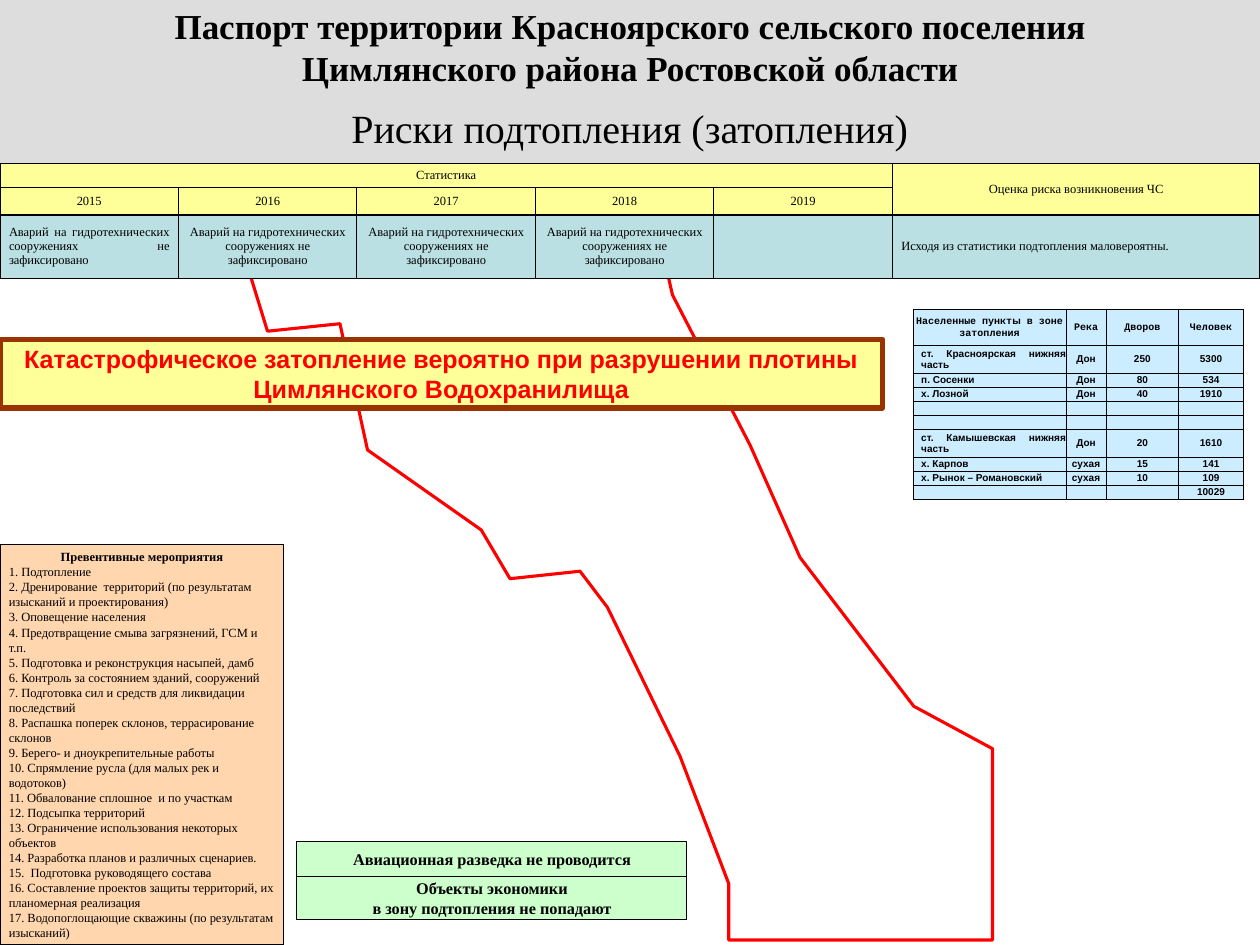
import pptx
import pptx.dml.color
import pptx.enum.shapes
import pptx.enum.text
import pptx.oxml.ns
import pptx.util
from lxml import etree

Pt = pptx.util.Pt
ALIGN = {
    "l": pptx.enum.text.PP_ALIGN.LEFT,
    "c": pptx.enum.text.PP_ALIGN.CENTER,
    "j": pptx.enum.text.PP_ALIGN.JUSTIFY,
}
MIDDLE = pptx.enum.text.MSO_ANCHOR.MIDDLE
TOP = pptx.enum.text.MSO_ANCHOR.TOP
SERIF, SANS, MONO = "Times New Roman", "Arial", "Courier New"

FLOOD_OUTLINE = [
    (793.5, 752.5), (793.5, 599), (731, 565), (640, 445.5), (600.5, 355.5),
    (538, 236), (521, 162.5), (476, 32.5), (299.5, 37.5), (198, 94.5),
    (186.5, 173.5), (214.5, 265), (271.5, 259), (294.5, 360.5), (385, 423.5),
    (407.5, 463), (464.5, 457), (486.5, 486), (543.5, 605), (583, 707),
    (583, 752.5),
]
YEARS = ["2015", "2016", "2017", "2018", "2019"]
NO_ACCIDENTS = "Аварий на гидротехнических сооружениях не зафиксировано"
SETTLEMENT_HEADS = [
    [("Населенны", MONO), ("е", SANS), (" пункт", MONO), ("ы", SANS),
     (" в зоне затопления", MONO)],
    "Река", "Дворов", "Человек",
]
SETTLEMENTS = [
    ("ст. Красноярская нижняя часть", "Дон", "250", "5300"),
    ("п. Сосенки", "Дон", "80", "534"),
    ("х. Лозной", "Дон", "40", "1910"),
    ("", "", "", ""),
    ("", "", "", ""),
    ("ст. Камышевская нижняя часть", "Дон", "20", "1610"),
    ("х. Карпов", "сухая", "15", "141"),
    ("х. Рынок – Романовский", "сухая", "10", "109"),
    ("", "", "", "10029"),
]
MEASURES = [
    "1. Подтопление",
    "2. Дренирование  территорий (по результатам изысканий и проектирования)",
    "3. Оповещение населения",
    "4. Предотвращение смыва загрязнений, ГСМ и т.п.",
    "5. Подготовка и реконструкция насыпей, дамб",
    "6. Контроль за состоянием зданий, сооружений",
    "7. Подготовка сил и средств для ликвидации последствий",
    "8. Распашка поперек склонов, террасирование склонов",
    "9. Берего- и дноукрепительные работы",
    "10. Спрямление русла (для малых рек и водотоков)",
    "11. Обвалование сплошное  и по участкам",
    "12. Подсыпка территорий",
    "13. Ограничение использования некоторых объектов",
    "14. Разработка планов и различных сценариев.",
    "15.  Подготовка руководящего состава",
    "16. Составление проектов защиты территорий, их планомерная реализация",
    "17. Водопоглощающие скважины (по результатам изысканий)",
]


def rgb(color):
    return pptx.dml.color.RGBColor.from_string(color)


def write_text(paragraph, text, size=10, font=SERIF, color="000000", bold=False,
               align="c", indent=0):
    """Text is a string, or a list of (text, font) runs."""
    paragraph.alignment = ALIGN[align]
    if indent:
        paragraph._p.get_or_add_pPr().set("marL", str(Pt(indent)))
    if not text:
        etree.SubElement(paragraph._p, pptx.oxml.ns.qn("a:endParaRPr"), sz=str(size * 100))
        return
    for words, face in [(text, font)] if isinstance(text, str) else text:
        run = paragraph.add_run()
        run.text = words
        run.font.size, run.font.name, run.font.bold = Pt(size), face, bold
        run.font.color.rgb = rgb(color)


def set_margins(holder, across, down):
    holder.margin_left = holder.margin_right = Pt(across)
    holder.margin_top = holder.margin_bottom = Pt(down)


def add_panel(slide, box, lines, fill, line=None, line_width=1, anchor=MIDDLE, **style):
    """Draws a filled rectangle with one paragraph for each line of text."""
    panel = slide.shapes.add_shape(pptx.enum.shapes.MSO_SHAPE.RECTANGLE, *map(Pt, box))
    panel.shadow.inherit = False
    panel.fill.solid()
    panel.fill.fore_color.rgb = rgb(fill)
    if line:
        panel.line.color.rgb = rgb(line)
        panel.line.width = Pt(line_width)
    else:
        panel.line.fill.background()
    frame = panel.text_frame
    frame.word_wrap = True
    frame.vertical_anchor = anchor
    set_margins(frame, 7.2, 3.6)
    for index, words in enumerate(lines):
        paragraph = frame.add_paragraph() if index else frame.paragraphs[0]
        write_text(paragraph, words, **style)
    return panel


def add_grid(slide, box, widths, heights):
    grid = slide.shapes.add_table(len(heights), len(widths), *map(Pt, box)).table
    grid.first_row = grid.horz_banding = False
    for column, width in zip(grid.columns, widths):
        column.width = Pt(width)
    for row, height in zip(grid.rows, heights):
        row.height = Pt(height)
    return grid


def fill_cell(cell, text, fill, margins=(7.2, 3.6), **style):
    properties = cell._tc.get_or_add_tcPr()
    for side in ("lnL", "lnR", "lnT", "lnB"):
        border = etree.SubElement(properties, pptx.oxml.ns.qn("a:" + side), w=str(Pt(1)))
        solid = etree.SubElement(border, pptx.oxml.ns.qn("a:solidFill"))
        etree.SubElement(solid, pptx.oxml.ns.qn("a:srgbClr"), val="000000")
    cell.fill.solid()
    cell.fill.fore_color.rgb = rgb(fill)
    cell.vertical_anchor = MIDDLE
    set_margins(cell, *margins)
    write_text(cell.text_frame.paragraphs[0], text, **style)


def add_flood_zone(slide, outline):
    builder = slide.shapes.build_freeform(*outline[0], scale=Pt(1))
    builder.add_line_segments(outline[1:], close=True)
    zone = builder.convert_to_shape()
    zone.shadow.inherit = False
    zone.fill.background()
    zone.line.color.rgb = rgb("FF0000")
    zone.line.width = Pt(2.5)


def add_heading(slide, left, top, width):
    add_panel(slide, (left, top + 72, width, 60.5), ["Риски подтопления (затопления)"],
              "DDDDDD", size=32)
    add_panel(slide, (left, top, width, 74),
              ["Паспорт территории Красноярского сельского поселения",
               "Цимлянского района Ростовской области"],
              "DDDDDD", anchor=TOP, size=28, bold=True)


def add_statistics(slide, box):
    year_width = 142.8
    widths = [year_width] * len(YEARS) + [box[2] - year_width * len(YEARS)]
    grid = add_grid(slide, box, widths, [19.5, 22, 50.5])
    last = len(YEARS)
    rows = [
        ["Статистика"] + [""] * (last - 1) + ["Оценка риска возникновения ЧС"],
        YEARS + [""],
        [NO_ACCIDENTS] * 4 + ["", "Исходя из статистики подтопления маловероятны."],
    ]
    for r, row in enumerate(rows):
        for c, words in enumerate(row):
            fill_cell(grid.cell(r, c), words, "BBE0E3" if r == 2 else "FFFF99",
                      align="j" if r == 2 and c in (0, last) else "c")
    grid.cell(0, 0).merge(grid.cell(0, last - 1))
    grid.cell(0, last).merge(grid.cell(1, last))


def add_settlements(slide, box):
    heights = [28.8] + [22.4 if row[0].startswith("ст.") else 11.2 for row in SETTLEMENTS]
    grid = add_grid(slide, box, [122.4, 32, 58, 52], heights)
    for r, row in enumerate([SETTLEMENT_HEADS] + SETTLEMENTS):
        for c, words in enumerate(row):
            named = r > 0 and c == 0
            fill_cell(grid.cell(r, c), words, "CCECFF", margins=(0, 0), size=8, bold=True,
                      font=SANS if r else MONO, align="j" if named else "c",
                      indent=6.5 if named else 0)


def add_measures(slide, box):
    panel = add_panel(slide, box, ["Превентивные мероприятия"], "FFCC99", "000000", bold=True)
    for measure in MEASURES:
        write_text(panel.text_frame.add_paragraph(), measure, align="l")
    tint = panel.fill._xPr.find(".//" + pptx.oxml.ns.qn("a:srgbClr"))
    etree.SubElement(tint, pptx.oxml.ns.qn("a:alpha"), val="79000")


def add_conclusions(slide, left, top, width):
    style = dict(fill="CCFFCC", line="000000", line_width=0.75, size=13, bold=True)
    add_panel(slide, (left, top, width, 28.5), ["Авиационная разведка не проводится"], **style)
    add_panel(slide, (left, top + 28.5, width, 34),
              ["Объекты экономики", "в зону подтопления не попадают"], **style)


def main():
    deck = pptx.Presentation()
    deck.slide_width, deck.slide_height = Pt(1008), Pt(756)
    slide = deck.slides.add_slide(deck.slide_layouts[6])
    add_flood_zone(slide, FLOOD_OUTLINE)
    add_heading(slide, 0, 0, 1008)
    add_statistics(slide, (0, 130.5, 1008, 92))
    add_panel(slide, (0, 271.5, 706, 55),
              ["Катастрофическое затопление вероятно при разрушении плотины "
               "Цимлянского Водохранилища"],
              "FFFF99", "993300", 4.5, TOP, size=20, font=SANS, color="FF0000", bold=True)
    add_settlements(slide, (730.5, 247.5, 264.4, 152))
    add_measures(slide, (0, 435.5, 227, 320.5))
    add_conclusions(slide, 237.5, 673, 312)
    deck.save("out.pptx")


if __name__ == "__main__":
    main()
